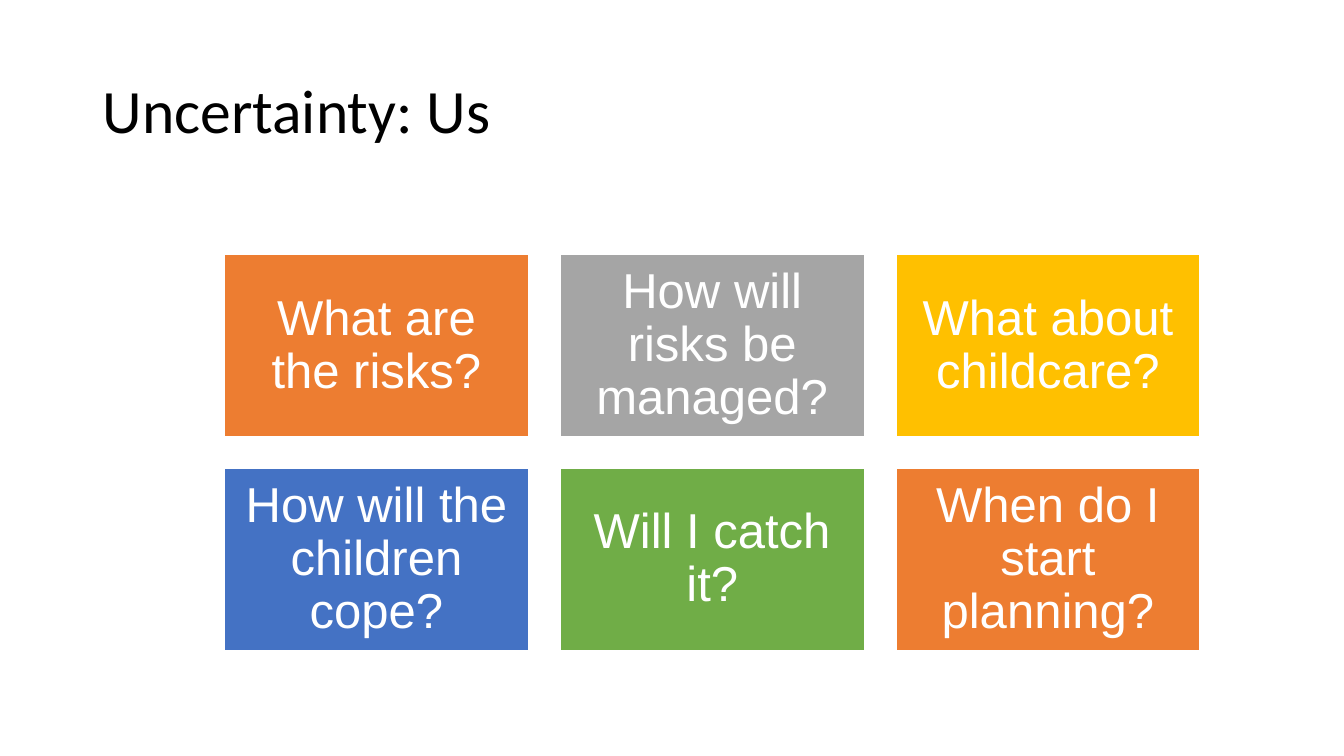
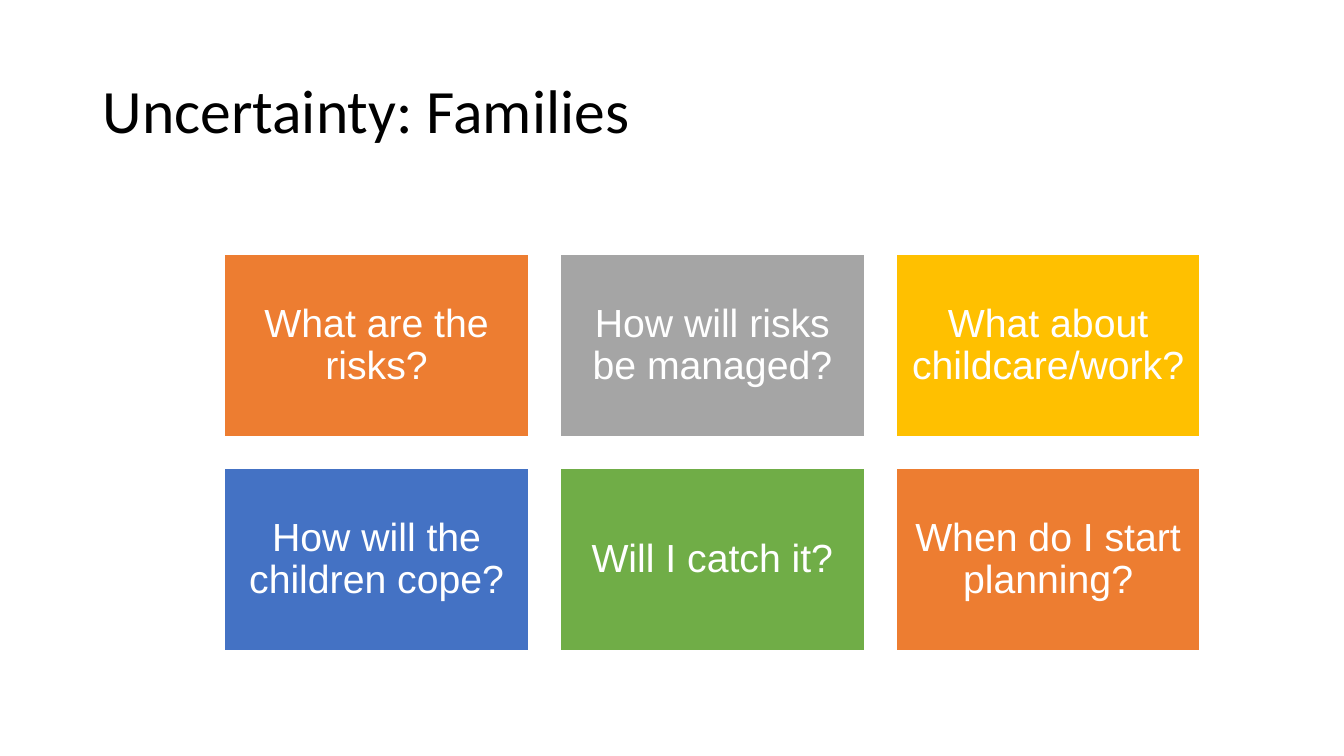
from dataclasses import dataclass
from itertools import cycle

from pptx import Presentation
from pptx.dml.color import RGBColor
from pptx.enum.shapes import MSO_SHAPE
from pptx.enum.text import MSO_ANCHOR, PP_ALIGN
from pptx.slide import Slide
from pptx.text.text import TextFrame
from pptx.util import Inches, Pt

BLACK, WHITE = "000000", "FFFFFF"
FILLS = ("ED7D31", "A5A5A5", "FFC000", "4472C4", "70AD47")
COLS = 3
LEFT, TOP = 2.22, 2.52
WIDTH, HEIGHT, GAP = 3.03, 1.82, 0.3


@dataclass(frozen=True)
class Style:
    font: str
    size: int
    color: str
    align: PP_ALIGN
    pad_x: float
    pad_y: float


@dataclass(frozen=True)
class Page:
    title: str
    size: int
    pad: float
    cards: tuple[str, ...]


TITLE = Style("Calibri", 44, BLACK, PP_ALIGN.LEFT, 0.1, 0.05)

PAGES = (
    Page("Uncertainty: Us", 35, 0.15, (
        "What are the risks?",
        "How will risks be managed?",
        "What about childcare?",
        "How will the children cope?",
        "Will I catch it?",
        "When do I start planning?",
    )),
    Page("Uncertainty: Families", 28, 0.12, (
        "What are the risks?",
        "How will risks be managed?",
        "What about childcare/work?",
        "How will the children cope?",
        "Will I catch it?",
        "When do I start planning?",
    )),
)


def rgb(code: str) -> RGBColor:
    return RGBColor.from_string(code)


def write(frame: TextFrame, text: str, style: Style) -> None:
    frame.word_wrap = True
    frame.vertical_anchor = MSO_ANCHOR.MIDDLE
    frame.margin_left = frame.margin_right = Inches(style.pad_x)
    frame.margin_top = frame.margin_bottom = Inches(style.pad_y)
    para = frame.paragraphs[0]
    para.alignment = style.align
    para.line_spacing = 0.9
    run = para.add_run()
    run.text = text
    run.font.name = style.font
    run.font.size = Pt(style.size)
    run.font.color.rgb = rgb(style.color)


def add_title(slide: Slide, text: str) -> None:
    box = slide.shapes.add_textbox(
        Inches(0.92), Inches(0.4), Inches(11.5), Inches(1.45)
    )
    write(box.text_frame, text, TITLE)


def add_card(slide: Slide, index: int, text: str, fill: str, style: Style) -> None:
    row, col = divmod(index, COLS)
    card = slide.shapes.add_shape(
        MSO_SHAPE.RECTANGLE,
        Inches(LEFT + col * (WIDTH + GAP)),
        Inches(TOP + row * (HEIGHT + GAP)),
        Inches(WIDTH),
        Inches(HEIGHT),
    )
    card.shadow.inherit = False
    card.fill.solid()
    card.fill.fore_color.rgb = rgb(fill)
    card.line.color.rgb = rgb(WHITE)
    card.line.width = Pt(2)
    write(card.text_frame, text, style)


def main() -> None:
    """Build the slides, each a title over a grid of question cards."""
    deck = Presentation()
    deck.slide_width, deck.slide_height = Inches(13.33), Inches(7.5)
    for page in PAGES:
        slide = deck.slides.add_slide(deck.slide_layouts[6])
        add_title(slide, page.title)
        style = Style("Arial", page.size, WHITE, PP_ALIGN.CENTER, page.pad, page.pad)
        for index, (text, fill) in enumerate(zip(page.cards, cycle(FILLS))):
            add_card(slide, index, text, fill, style)
    deck.save("out.pptx")


if __name__ == "__main__":
    main()
